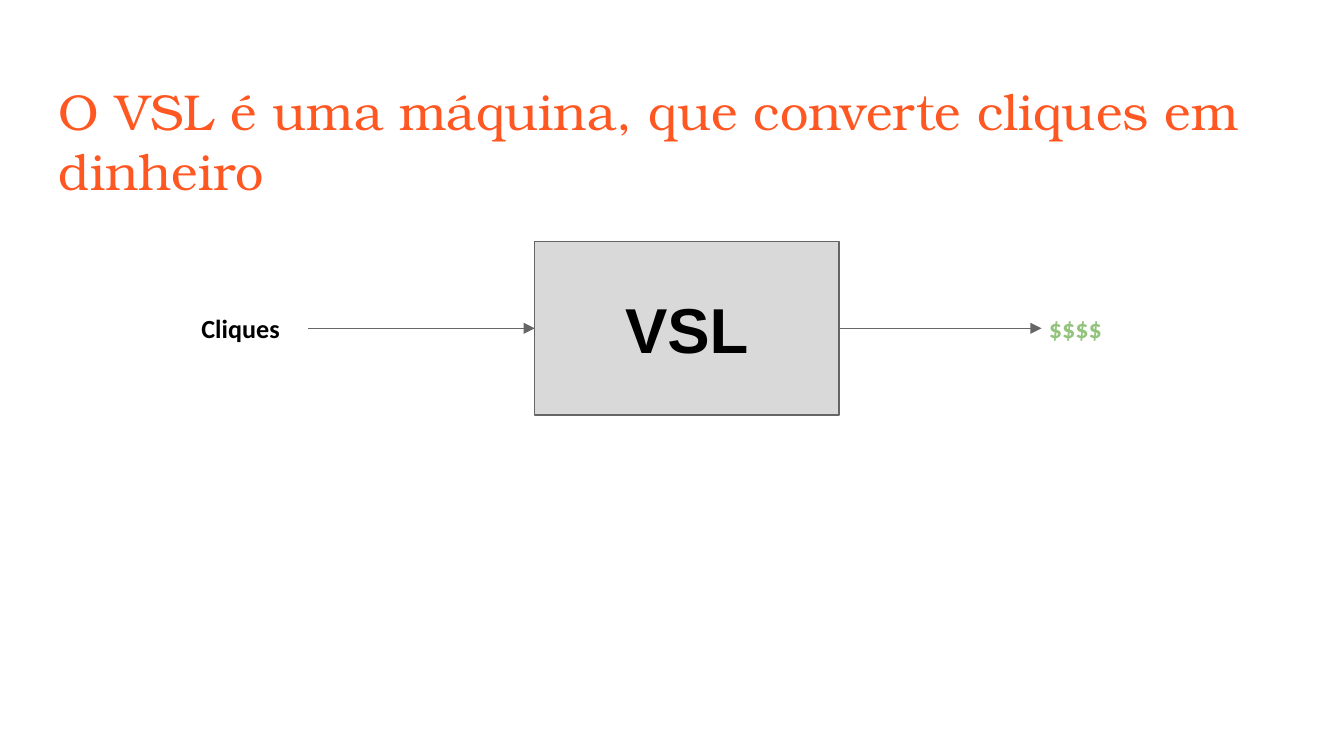
from lxml import etree
from pptx import Presentation
from pptx.dml.color import RGBColor
from pptx.enum import shapes, text
from pptx.oxml import ns
from pptx.util import Pt

HUES = {"title": "FF5722", "ink": "000000", "money": "93C47D",
        "box": "D9D9D9", "line": "666666"}
PAD = 7.2
MID = 175.9


def color(name):
    return RGBColor.from_string(HUES[name])


def write(shape, words, face, size, hue, bold=False):
    frame = shape.text_frame
    frame.word_wrap = True
    frame.margin_left = frame.margin_right = Pt(PAD)
    frame.margin_top = frame.margin_bottom = Pt(PAD)
    para = frame.paragraphs[0]
    para.text = words
    font = para.font
    font.name, font.size, font.bold = face, Pt(size), bold
    font.color.rgb = color(hue)
    return para


def label(slide, words, left, top, width, height, face, size, hue, bold=False):
    box = slide.shapes.add_textbox(Pt(left), Pt(top), Pt(width), Pt(height))
    write(box, words, face, size, hue, bold)
    box.text_frame.vertical_anchor = text.MSO_ANCHOR.TOP


def machine(slide, words, left, width, height):
    box = slide.shapes.add_shape(shapes.MSO_SHAPE.RECTANGLE, Pt(left),
                                 Pt(MID - height / 2), Pt(width), Pt(height))
    box.shadow.inherit = False
    box.fill.solid()
    box.fill.fore_color.rgb = color("box")
    box.line.color.rgb = color("line")
    box.line.width = Pt(0.75)
    para = write(box, words, "Arial", 34, "ink", True)
    para.alignment = text.PP_ALIGN.CENTER
    box.text_frame.vertical_anchor = text.MSO_ANCHOR.MIDDLE
    return box


def arrow(slide, start, end):
    link = slide.shapes.add_connector(shapes.MSO_CONNECTOR.STRAIGHT,
                                      Pt(start), Pt(MID), Pt(end), Pt(MID))
    link.line.color.rgb = color("line")
    link.line.width = Pt(0.75)
    tip = etree.SubElement(link.line._get_or_add_ln(), ns.qn("a:tailEnd"))
    tip.set("type", "triangle")
    etree.SubElement(link._element.spPr, ns.qn("a:effectLst"))
    return link


def main():
    deck = Presentation()
    deck.slide_width, deck.slide_height = Pt(720), Pt(405)
    slide = deck.slides.add_slide(deck.slide_layouts[6])

    left, width = 286.5, 163
    box = machine(slide, "VSL", left, width, 93)
    arrow(slide, left + width, 558).begin_connect(box, 3)
    arrow(slide, 165, left).end_connect(box, 1)

    label(slide, "Cliques", 100.8, 160, 64.2, 31.5, "Calibri", 14, "ink", True)
    label(slide, "$$$$", 554.8, 160, 77, 31.5, "Calibri", 14, "money", True)
    label(slide, "O VSL é uma máquina, que converte cliques em dinheiro",
          24.5, 35.5, 671, 45, "TeX Gyre Bonum", 27, "title")
    deck.save("out.pptx")


if __name__ == "__main__":
    main()
